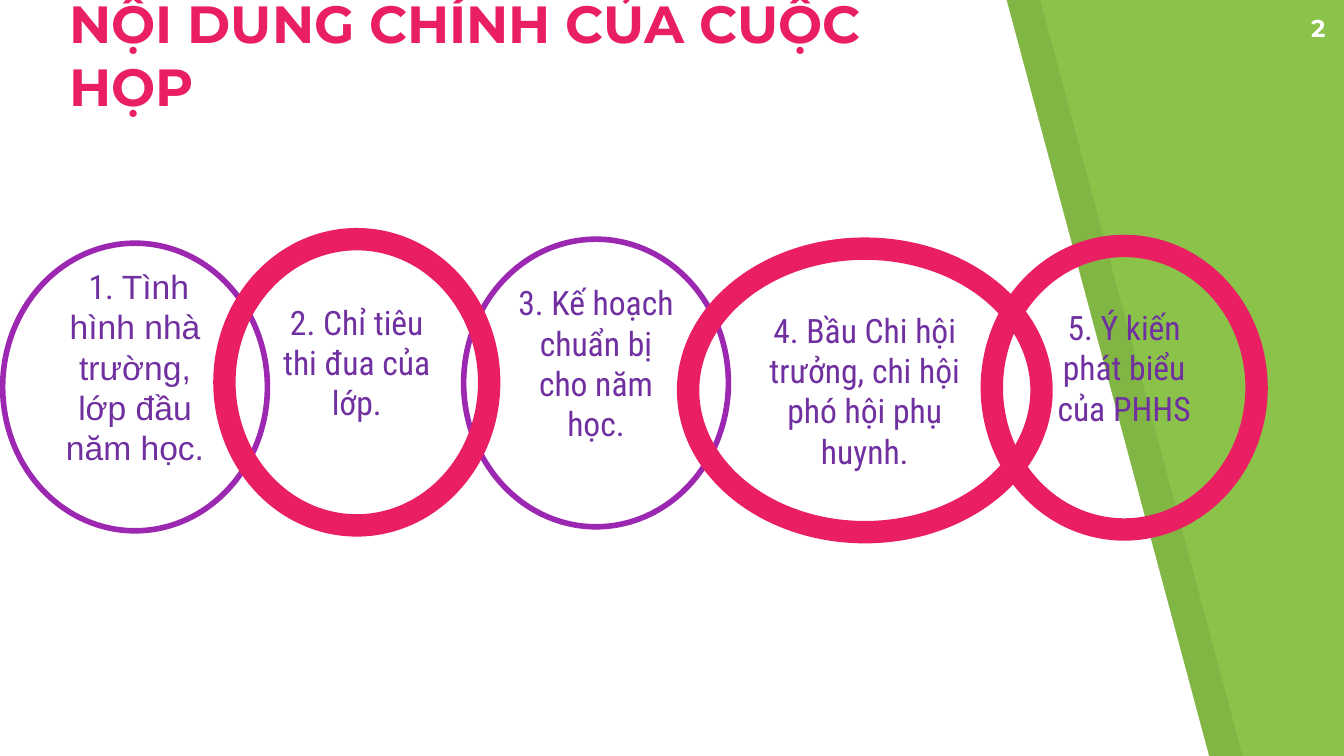
from pptx import Presentation
from pptx.dml.color import RGBColor
from pptx.enum.shapes import MSO_SHAPE
from pptx.enum.text import MSO_ANCHOR, PP_ALIGN
from pptx.oxml.ns import qn
from pptx.util import Inches, Pt
from lxml import etree

OVAL = MSO_SHAPE.OVAL
TOP, MIDDLE, BOTTOM = MSO_ANCHOR.TOP, MSO_ANCHOR.MIDDLE, MSO_ANCHOR.BOTTOM
LEFT, CENTER, RIGHT = PP_ALIGN.LEFT, PP_ALIGN.CENTER, PP_ALIGN.RIGHT

THEME = {
    "green": "8BC34A", "white": "FFFFFF", "black": "000000",
    "pink": "E91E63", "purple": "9C27B0", "ink": "7030A0",
    "heading": "Montserrat", "body": "Roboto Condensed", "plain": "Arial",
    "title_size": 28, "number_size": 13, "ring_size": 18,
    "thin": 3, "thick": 12, "inset": 0.1, "raised": 0.4,
}

# Content
TITLE = "NỘI DUNG CHÍNH CỦA CUỘC HỌP"
PAGE_NUMBER = "2"
# Rings from back to front: box, style, bottom inset, (text, font) spans
RINGS = [
    ((0.02, 1.81, 1.97, 2.14), ("purple", "thin"), "raised",
     [(" 1. ", "body"), ("Tình hình nhà trường, lớp đầu năm học.", "plain")]),
    ((3.45, 1.78, 1.97, 2.14), ("purple", "thin"), "raised",
     [("3. Kế hoạch chuẩn bị cho năm học.", "body")]),
    ((1.67, 1.78, 1.97, 2.13), ("pink", "thick"), "raised",
     [("2. Chỉ tiêu thi đua của lớp.", "body")]),
    ((5.12, 1.85, 2.63, 2.11), ("pink", "thick"), "inset",
     [("4. Bầu Chi hội trưởng, chi hội phó hội phụ huynh.", "body")]),
    ((7.38, 1.83, 1.97, 2.11), ("pink", "thick"), "raised",
     [("5. Ý kiến phát biểu của PHHS", "body")]),
]


def color(name):
    return RGBColor.from_string(THEME[name])


def add_panel(page, left, fill, opacity=None):
    """Slanted panel that runs the full height of the page."""
    corners = [(0, -0.01), (0, 5.64), (9, 5.64), (7.49, 0)]
    points = [(Inches(left + x), Inches(y)) for x, y in corners]
    builder = page.shapes.build_freeform(*points[0], scale=1.0)
    builder.add_line_segments(points[1:], close=True)
    panel = builder.convert_to_shape()
    panel.shadow.inherit = False
    panel.fill.solid()
    panel.fill.fore_color.rgb = color(fill)
    panel.line.fill.background()
    if opacity is not None:
        tone = panel.fill._xPr.find(".//" + qn("a:srgbClr"))
        etree.SubElement(tone, qn("a:alpha"), val=str(opacity * 1000))


def write(shape, spans, size, ink, align, anchor, bold=False, bottom="inset"):
    frame = shape.text_frame
    frame.word_wrap = True
    frame.vertical_anchor = anchor
    frame.margin_left = frame.margin_right = frame.margin_top = Inches(THEME["inset"])
    frame.margin_bottom = Inches(THEME[bottom])
    para = frame.paragraphs[0]
    para.alignment = align
    para.font.size = Pt(THEME[size])
    para.font.bold = bold
    para.font.color.rgb = color(ink)
    for text, font in spans:
        span = para.add_run()
        span.text = text
        span.font.name = THEME[font]


def add_text(page, box, text, size, ink, align, anchor):
    label = page.shapes.add_textbox(*map(Inches, box))
    write(label, [(text, "heading")], size, ink, align, anchor, bold=True)


def add_ring(page, box, style, bottom, spans):
    outline, weight = style
    ring = page.shapes.add_shape(OVAL, *map(Inches, box))
    ring.shadow.inherit = False
    ring.fill.background()
    ring.line.color.rgb = color(outline)
    ring.line.width = Pt(THEME[weight])
    write(ring, spans, "ring_size", "ink", CENTER, MIDDLE, bottom=bottom)


def main():
    # Widescreen page, 16 to 9
    deck = Presentation()
    deck.slide_width = Inches(10)
    deck.slide_height = Inches(10) * 9 // 16
    page = deck.slides.add_slide(deck.slide_layouts[6])

    # Background: green, with a white panel over its translucent edge
    page.background.fill.solid()
    page.background.fill.fore_color.rgb = color("green")
    add_panel(page, 0.25, "black", opacity=7)
    add_panel(page, 0, "white")

    # Title and page number
    add_text(page, (0.42, 0.23, 7.08, 0.74), TITLE, "title_size", "pink", LEFT, BOTTOM)
    add_text(page, (9.36, 0, 0.6, 0.43), PAGE_NUMBER, "number_size", "white", RIGHT, TOP)

    # Chain of agenda rings
    for ring in RINGS:
        add_ring(page, *ring)

    deck.save("out.pptx")


if __name__ == "__main__":
    main()
